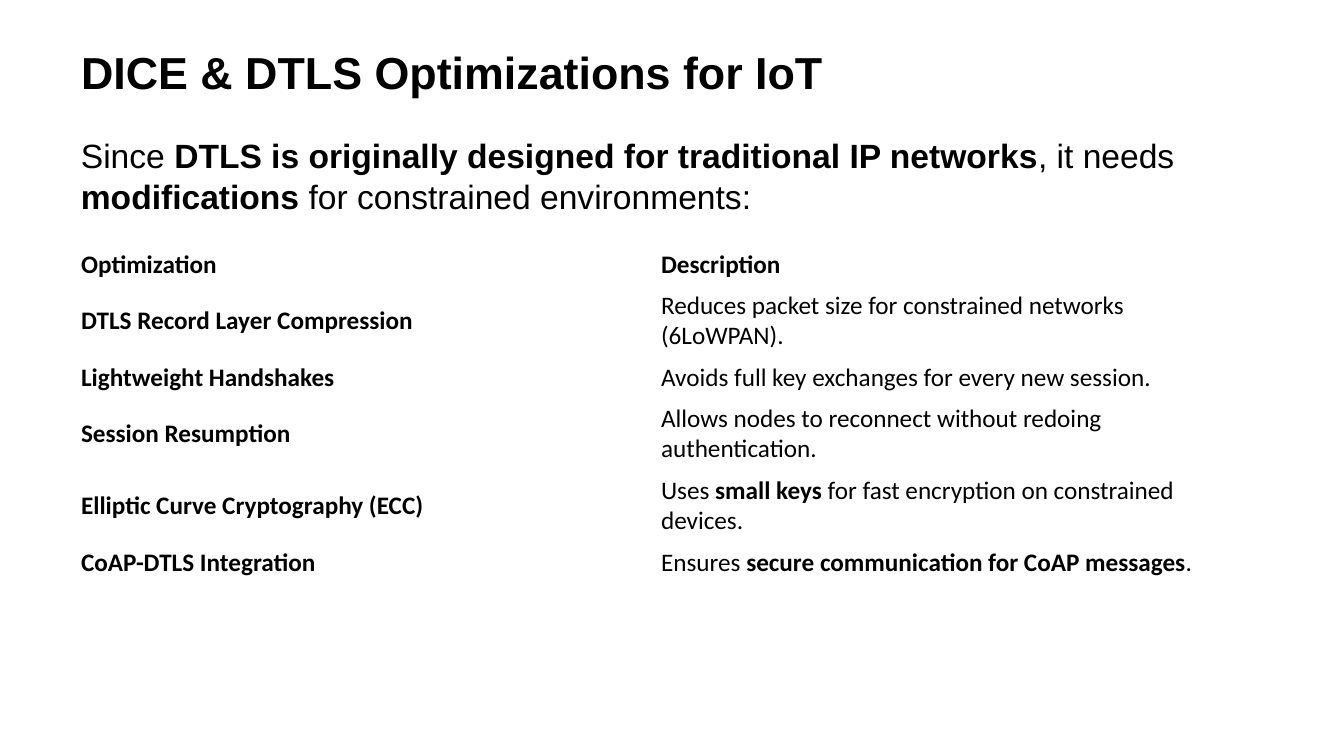
from dataclasses import dataclass

from pptx import Presentation
from pptx import util as u
from pptx.dml.color import RGBColor
from pptx.enum import text


@dataclass(frozen=True)
class Theme:
    ink: RGBColor = RGBColor(0, 0, 0)
    head: str = "Arial"
    body: str = "Calibri"
    title: int = 32
    intro: int = 24
    cell: int = 18


theme = Theme()


def px(n):
    return u.Emu(round(n * 914400 / 100.8))


def write(frame, parts, font, size):
    """Fill the first paragraph with (words, bold) runs."""
    para = frame.paragraphs[0]
    para.alignment = text.PP_ALIGN.LEFT
    for words, bold in parts:
        run = para.add_run()
        run.text = words
        run.font.name = font
        run.font.size = u.Pt(size)
        run.font.bold = bold
        run.font.color.rgb = theme.ink


deck = Presentation()
deck.slide_width, deck.slide_height = px(1344), px(756)
slide = deck.slides.add_slide(deck.slide_layouts[5])
left, wide = 71, 1145

# Heading and introduction
title = slide.shapes.title
title.left, title.top, title.width, title.height = px(left), px(41), px(wide), px(62)
intro = slide.shapes.add_textbox(px(left), px(132), px(wide), px(87))
for box in (title, intro):
    box.text_frame.word_wrap = True
    box.text_frame.auto_size = text.MSO_AUTO_SIZE.NONE
    box.text_frame.vertical_anchor = text.MSO_ANCHOR.MIDDLE

write(title.text_frame, [("DICE & DTLS Optimizations for IoT", True)],
      theme.head, theme.title)
write(intro.text_frame, [
    ("Since ", False),
    ("DTLS is originally designed for traditional IP networks", True),
    (", it needs ", False),
    ("modifications", True),
    (" for constrained environments:", False),
], theme.head, theme.intro)

# Table: row height in px, optimization, description runs
rows = [
    (41, "Optimization", [("Description", True)]),
    (72, "DTLS Record Layer Compression",
     [("Reduces packet size for constrained networks (6LoWPAN).", False)]),
    (41, "Lightweight Handshakes",
     [("Avoids full key exchanges for every new session.", False)]),
    (72, "Session Resumption",
     [("Allows nodes to reconnect without redoing authentication.", False)]),
    (72, "Elliptic Curve Cryptography (ECC)",
     [("Uses ", False), ("small keys", True),
      (" for fast encryption on constrained devices.", False)]),
    (41, "CoAP-DTLS Integration",
     [("Ensures ", False), ("secure communication for CoAP messages", True),
      (".", False)]),
]
high = sum(row[0] for row in rows)
table = slide.shapes.add_table(
    len(rows), 2, px(left), px(244), px(1160), px(high)).table
table.first_row = table.horz_banding = False
for line, (tall, name, about) in zip(table.rows, rows):
    line.height = px(tall)
    for cell, parts in zip(line.cells, ([(name, True)], about)):
        cell.fill.background()
        cell.vertical_anchor = text.MSO_ANCHOR.MIDDLE
        write(cell.text_frame, parts, theme.body, theme.cell)

deck.save("out.pptx")
